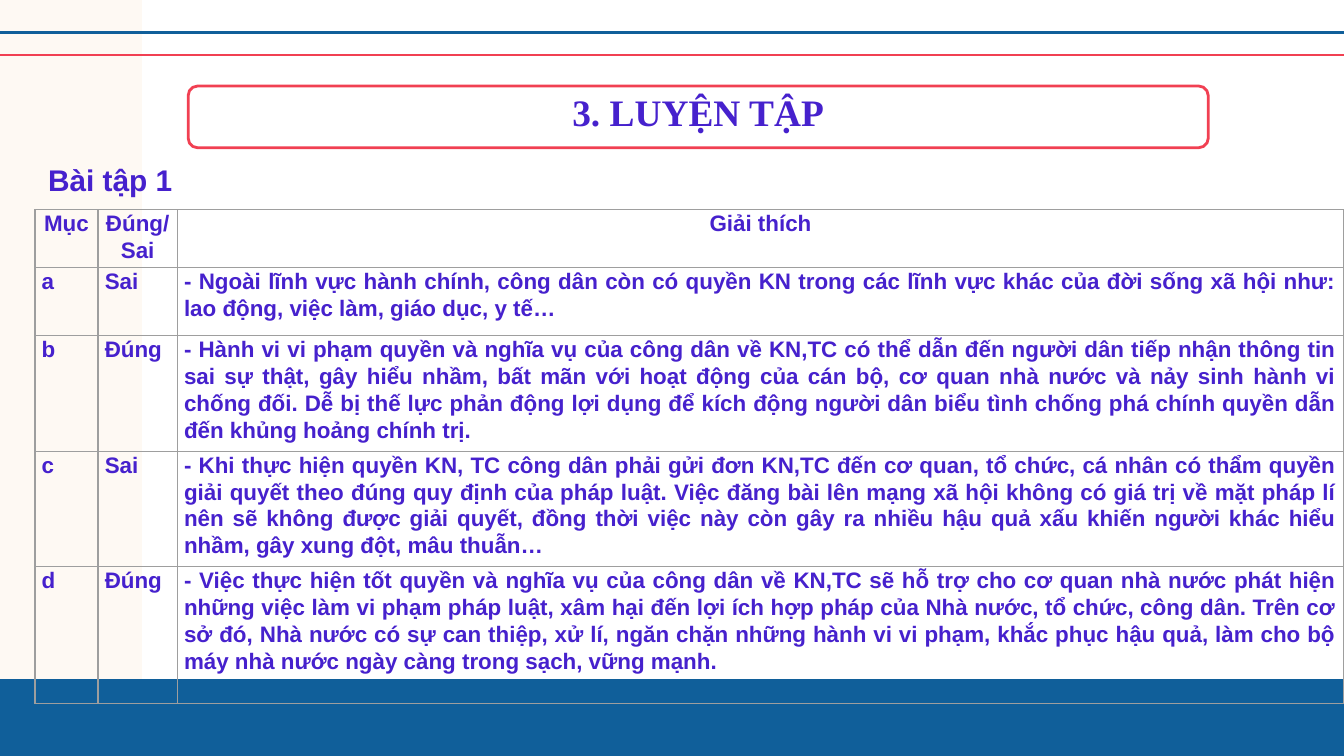
from lxml import etree
from pptx import Presentation
from pptx.dml.color import RGBColor
from pptx.enum import shapes, text
from pptx.oxml import ns
from pptx.util import Inches, Pt

# Content
TITLE = "3. LUYỆN TẬP"
EXERCISE = "Bài tập 1"
HEADER = ("Mục", "Đúng/ Sai", "Giải thích")
ANSWERS = [
    ("a", "Sai", "- Ngoài lĩnh vực hành chính, công dân còn có quyền KN trong các lĩnh vực khác của đời sống xã hội như: lao động, việc làm, giáo dục, y tế…"),
    ("b", "Đúng", "- Hành vi vi phạm quyền và nghĩa vụ của công dân về KN,TC có thể dẫn đến người dân tiếp nhận thông tin sai sự thật, gây hiểu nhầm, bất mãn với hoạt động của cán bộ, cơ quan nhà nước và nảy sinh hành vi chống đối. Dễ bị thế lực phản động lợi dụng để kích động người dân biểu tình chống phá chính quyền dẫn đến khủng hoảng chính trị."),
    ("c", "Sai", "- Khi thực hiện quyền KN, TC công dân phải gửi đơn KN,TC đến cơ quan, tổ chức, cá nhân có thẩm quyền giải quyết theo đúng quy định của pháp luật. Việc đăng bài lên mạng xã hội không có giá trị về mặt pháp lí nên sẽ không được giải quyết, đồng thời việc này còn gây ra nhiều hậu quả xấu khiến người khác hiểu nhầm, gây xung đột, mâu thuẫn…"),
    ("d", "Đúng", "- Việc thực hiện tốt quyền và nghĩa vụ của công dân về KN,TC sẽ hỗ trợ cho cơ quan nhà nước phát hiện những việc làm vi phạm pháp luật, xâm hại đến lợi ích hợp pháp của Nhà nước, tổ chức, công dân. Trên cơ sở đó, Nhà nước có sự can thiệp, xử lí, ngăn chặn những hành vi vi phạm, khắc phục hậu quả, làm cho bộ máy nhà nước ngày càng trong sạch, vững mạnh."),
]
COLUMN_WIDTHS = (0.47, 0.59, 8.68)
ROW_HEIGHTS = (0.42, 0.51, 0.86, 0.86, 1.02)
WIDTH = 10
HEIGHT = WIDTH * 9 / 16
FOOTER_TOP = 5.05

THEME = {
    "cream": "FEF9F3", "blue": "105F9A", "red": "F14052", "ink": "4621CD", "grid": "9E9E9E",
    "title": 20, "heading": 16, "body": 12, "sans": "Arial", "serif": "Times New Roman",
}
ALIGN = text.PP_ALIGN


def color(name):
    return RGBColor.from_string(THEME[name])


def set_insets(holder, left, top, right, bottom):
    holder.margin_left, holder.margin_top = Inches(left), Inches(top)
    holder.margin_right, holder.margin_bottom = Inches(right), Inches(bottom)


def write(para, words, size="body", font="sans", align=ALIGN.LEFT, spacing=None):
    para.alignment = align
    if spacing:
        para.line_spacing = spacing
    span = para.add_run()
    span.text = words
    span.font.name, span.font.size, span.font.bold = THEME[font], Pt(THEME[size]), True
    span.font.color.rgb = color("ink")


def add_band(slide, left, top, width, height, fill):
    builder = slide.shapes.build_freeform(Inches(left), Inches(top), scale=1.0)
    corners = [(left, top + height), (left + width, top + height), (left + width, top)]
    builder.add_line_segments([(Inches(x), Inches(y)) for x, y in corners], close=True)
    band = builder.convert_to_shape()
    band.shadow.inherit = False
    band.fill.solid()
    band.fill.fore_color.rgb = color(fill)
    band.line.fill.background()


def add_rule(slide, y, line):
    rule = slide.shapes.add_connector(shapes.MSO_CONNECTOR.STRAIGHT, 0, Inches(y), Inches(WIDTH), Inches(y))
    rule.line.color.rgb, rule.line.width = color(line), Pt(1.5)
    etree.SubElement(rule._element.spPr, ns.qn("a:effectLst"))


def style_cell(cell):
    set_insets(cell, 0.05, 0, 0.05, 0)
    properties = cell._tc.get_or_add_tcPr()
    for side in ("lnL", "lnR", "lnT", "lnB"):
        border = etree.SubElement(properties, ns.qn("a:" + side), w=str(Pt(0.75)))
        fill = etree.SubElement(border, ns.qn("a:solidFill"))
        etree.SubElement(fill, ns.qn("a:srgbClr"), val=THEME["grid"])
    cell.fill.background()


def add_answers(slide, left, top):
    rows = [HEADER, *ANSWERS]
    frame = slide.shapes.add_table(len(rows), len(HEADER), Inches(left), Inches(top),
                                   Inches(sum(COLUMN_WIDTHS)), Inches(sum(ROW_HEIGHTS)))
    table = frame.table
    table.first_row = table.horz_banding = False
    for column, width in zip(table.columns, COLUMN_WIDTHS):
        column.width = Inches(width)
    for index, (row, height, values) in enumerate(zip(table.rows, ROW_HEIGHTS, rows)):
        row.height = Inches(height)
        for cell, words in zip(row.cells, values):
            write(cell.text_frame.paragraphs[0], words, spacing=1.07,
                  align=ALIGN.JUSTIFY if index else ALIGN.CENTER)
            style_cell(cell)


def main():
    deck = Presentation()
    deck.slide_width, deck.slide_height = Inches(WIDTH), Inches(HEIGHT)
    slide = deck.slides.add_slide(deck.slide_layouts[6])

    # Background bands and top rules
    add_band(slide, 0, 0, 1.06, HEIGHT, "cream")
    add_band(slide, 0, FOOTER_TOP, WIDTH, HEIGHT - FOOTER_TOP, "blue")
    add_rule(slide, 0.41, "red")
    add_rule(slide, 0.24, "blue")

    # Exercise heading
    heading = slide.shapes.add_textbox(Inches(0.26), Inches(1.1), Inches(9.3), Inches(0.77))
    heading.text_frame.word_wrap = True
    set_insets(heading.text_frame, 0.1, 0.1, 0.1, 0.05)
    write(heading.text_frame.paragraphs[0], EXERCISE, size="heading")

    # Title frame
    box = slide.shapes.add_shape(shapes.MSO_SHAPE.ROUNDED_RECTANGLE,
                                 Inches(1.4), Inches(0.64), Inches(7.59), Inches(0.46))
    box.adjustments[0] = 0.155
    box.shadow.inherit = False
    box.fill.background()
    box.line.color.rgb, box.line.width = color("red"), Pt(1.5)
    box.text_frame.word_wrap = True
    box.text_frame.vertical_anchor = text.MSO_ANCHOR.MIDDLE
    set_insets(box.text_frame, 0.08, 0, 0.08, 0.08)
    write(box.text_frame.paragraphs[0], TITLE, size="title", font="serif", align=ALIGN.CENTER)

    # Answer table
    add_answers(slide, 0.26, 1.56)
    deck.save("out.pptx")


if __name__ == "__main__":
    main()
